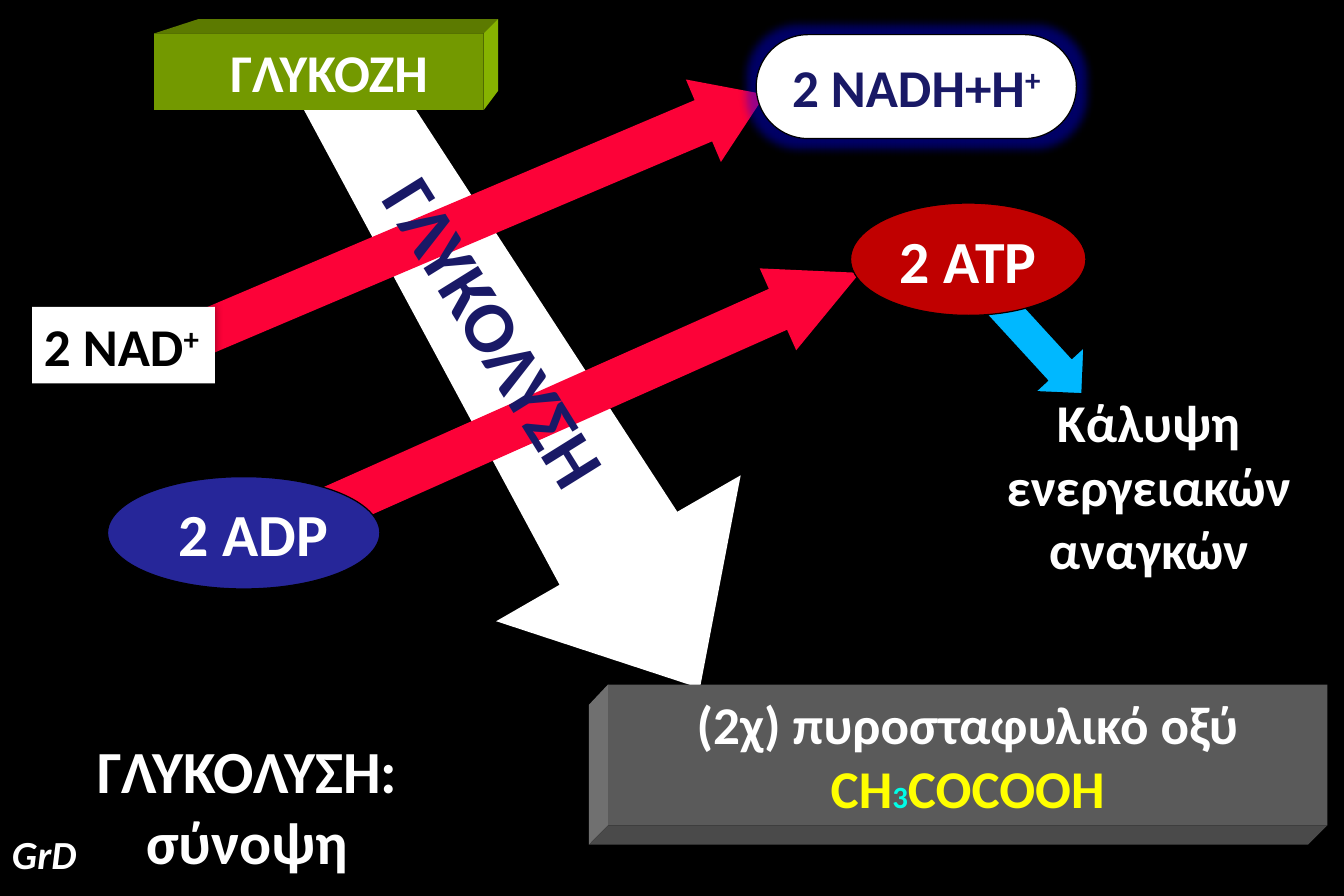
from lxml import etree
from pptx import Presentation
from pptx.dml.color import RGBColor
from pptx.enum.shapes import MSO_SHAPE
from pptx.enum.text import MSO_ANCHOR, MSO_AUTO_SIZE, PP_ALIGN
from pptx.oxml.ns import qn
from pptx.util import Inches, Pt

RECT, OVAL, PILL = MSO_SHAPE.RECTANGLE, MSO_SHAPE.OVAL, MSO_SHAPE.ROUNDED_RECTANGLE
RIGHT_ARROW, DOWN_ARROW = MSO_SHAPE.RIGHT_ARROW, MSO_SHAPE.DOWN_ARROW
TOP, MIDDLE = MSO_ANCHOR.TOP, MSO_ANCHOR.MIDDLE
LEFT, CENTER, RIGHT = PP_ALIGN.LEFT, PP_ALIGN.CENTER, PP_ALIGN.RIGHT
NO_FIT = MSO_AUTO_SIZE.NONE
BLACK, WHITE, NAVY, RED = "000000", "FFFFFF", "191966", "FC0238"


def color(code):
    return RGBColor.from_string(code)


def paint(shape, fill, line=None):
    shape.shadow.inherit = False
    shape.fill.solid()
    shape.fill.fore_color.rgb = color(fill)
    if line:
        shape.line.color.rgb = color(line)
        shape.line.width = Pt(0.75)
    else:
        shape.line.fill.background()


def halo(shape, kind, size, code, alpha, **extra):
    effects = shape.element.spPr.find(qn("a:effectLst"))
    effect = etree.SubElement(effects, qn("a:" + kind), {size[0]: str(Pt(size[1])), **extra})
    tint = etree.SubElement(effect, qn("a:srgbClr"), val=code)
    etree.SubElement(tint, qn("a:alpha"), val=str(alpha * 1000))


def style(runs, size, code, italic=False):
    for run in runs:
        font = run.font
        font.name, font.size = "Calibri", Pt(size)
        font.bold, font.italic = True, italic
        font.color.rgb = color(code)


def write(shape, text, size, code, align=CENTER, anchor=MIDDLE, wrap=True, italic=False):
    frame = shape.text_frame
    frame.text = text
    frame.word_wrap, frame.vertical_anchor = wrap, anchor
    frame.auto_size = NO_FIT
    for para in frame.paragraphs:
        para.alignment = align
        style(para.runs, size, code, italic)
    return frame


def append(para, text, size, code, base=0):
    run = para.add_run()
    run.text = text
    style([run], size, code)
    if base:
        run.font._element.set("baseline", str(base * 1000))


def block(slide, kind, box, fill, line=None, turn=0):
    shape = slide.shapes.add_shape(kind, *map(Inches, box))
    shape.rotation = turn
    paint(shape, fill, line)
    return shape


def outline(slide, points, fill, origin=(0, 0)):
    spots = [(Inches(origin[0] + x), Inches(origin[1] + y)) for x, y in points]
    pen = slide.shapes.build_freeform(*spots[0])
    pen.add_line_segments(spots[1:], close=True)
    shape = pen.convert_to_shape()
    paint(shape, fill)
    return shape


def label(slide, box, text, size, code, turn=0, **kind):
    shape = slide.shapes.add_textbox(*map(Inches, box))
    shape.rotation = turn
    write(shape, text, size, code, anchor=TOP, **kind)


def main_arrow(slide, box):
    x, y, w, h = box
    outline(slide, [(0.15 * w, 0), (0.6 * w, 0), (0.74 * w, 0.71 * h)][:0] + [
        (0, 0), (0.24 * w, 0), (0.86 * w, 0.71 * h), (w, 0.65 * h),
        (0.91 * w, h), (0.46 * w, 0.89 * h), (0.6 * w, 0.83 * h)], WHITE, (x, y))


def sugar(slide, box):
    x, y, w, h = box
    outline(slide, [(0, 0), (0.37, -0.12), (w + 0.12, -0.12), (w, 0)], "5C7A00", (x, y))
    outline(slide, [(w, 0), (w + 0.12, -0.12), (w + 0.12, h - 0.16), (w, h)], "86B300", (x, y))
    front = block(slide, RECT, box, "739900")
    frame = write(front, "ΓΛΥΚΟΖΗ", 32, WHITE)
    frame.margin_left = Inches(0.27)


def acid(slide, box):
    x, y, w, h = box
    outline(slide, [(0, 0), (-0.16, 0.17), (-0.16, h + 0.16), (0, h)], "707070", (x, y))
    outline(slide, [(0, h), (-0.16, h + 0.16), (w - 0.16, h + 0.16), (w, h)], "4A4A4A", (x, y))
    front = block(slide, RECT, box, "5A5A5A")
    frame = write(front, "(2χ) πυροσταφυλικό οξύ", 32, WHITE)
    para = frame.add_paragraph()
    para.alignment = CENTER
    append(para, "CH", 32, "FFFF00")
    append(para, "3", 32, "00FEE7", -1)
    append(para, "COCOOH", 32, "FFFF00")


def red_arrow(slide, box, turn, head):
    arrow = block(slide, RIGHT_ARROW, box, RED, turn=turn)
    arrow.adjustments[1] = head


def ion(slide, kind, box, text, code, align, line=None):
    shape = block(slide, kind, box, WHITE, line)
    frame = write(shape, text, 32, code, align, wrap=False)
    append(frame.paragraphs[0], "+", 32, code, 30)
    return shape


def oval(slide, box, text, fill, align):
    write(block(slide, OVAL, box, fill, BLACK), text, 36, WHITE, align)


def heading(slide, box):
    title = slide.shapes.title
    title.left, title.top, title.width, title.height = map(Inches, box)
    write(title, "ΓΛΥΚΟΛΥΣΗ:\nσύνοψη", 36, WHITE, anchor=TOP, wrap=False)


def main():
    deck = Presentation()
    deck.slide_width, deck.slide_height = Inches(11.25), Inches(7.5)
    slide = deck.slides.add_slide(deck.slide_layouts[5])
    slide.background.fill.solid()
    slide.background.fill.fore_color.rgb = color(BLACK)

    heading(slide, (0.7, 6.09, 2.74, 1.31))
    block(slide, DOWN_ARROW, (8.41, 2.34, 0.55, 1.1), "00B8FF", BLACK, 317.5)
    main_arrow(slide, (2.41, 0.67, 3.79, 5.09))
    sugar(slide, (1.29, 0.28, 2.76, 0.64))
    acid(slide, (5.09, 5.73, 6.02, 1.18))
    red_arrow(slide, (2.49, 2.91, 4.92, 0.75), 336, 1)
    red_arrow(slide, (1.47, 1.42, 5.14, 0.75), 337, 0.75)
    nad = ion(slide, RECT, (0.27, 2.57, 1.53, 0.64), "2 NAD", BLACK, LEFT)
    halo(nad, "outerShdw", ("blurRad", 5), BLACK, 40)
    label(slide, (2.46, 2.62, 3.73, 0.84), "ΓΛΥΚΟΛΥΣΗ", 44, NAVY, 58.1, align=LEFT)
    oval(slide, (0.9, 3.99, 2.28, 0.94), "2 ADP", "262699", RIGHT)
    oval(slide, (7.12, 1.7, 1.97, 0.94), "2 ATP", "C00000", CENTER)
    nadh = ion(slide, PILL, (6.33, 0.29, 2.68, 0.87), "2 NADH+H", NAVY, CENTER, BLACK)
    nadh.adjustments[0] = 0.5
    halo(nadh, "glow", ("rad", 11), "0000FF", 40)
    label(slide, (0, 6.9, 0.74, 0.5), "GrD", 24, WHITE, italic=True)
    label(slide, (8.04, 3.21, 3.15, 1.72), "Κάλυψη ενεργειακών αναγκών", 32, WHITE)
    deck.save("out.pptx")


if __name__ == "__main__":
    main()
